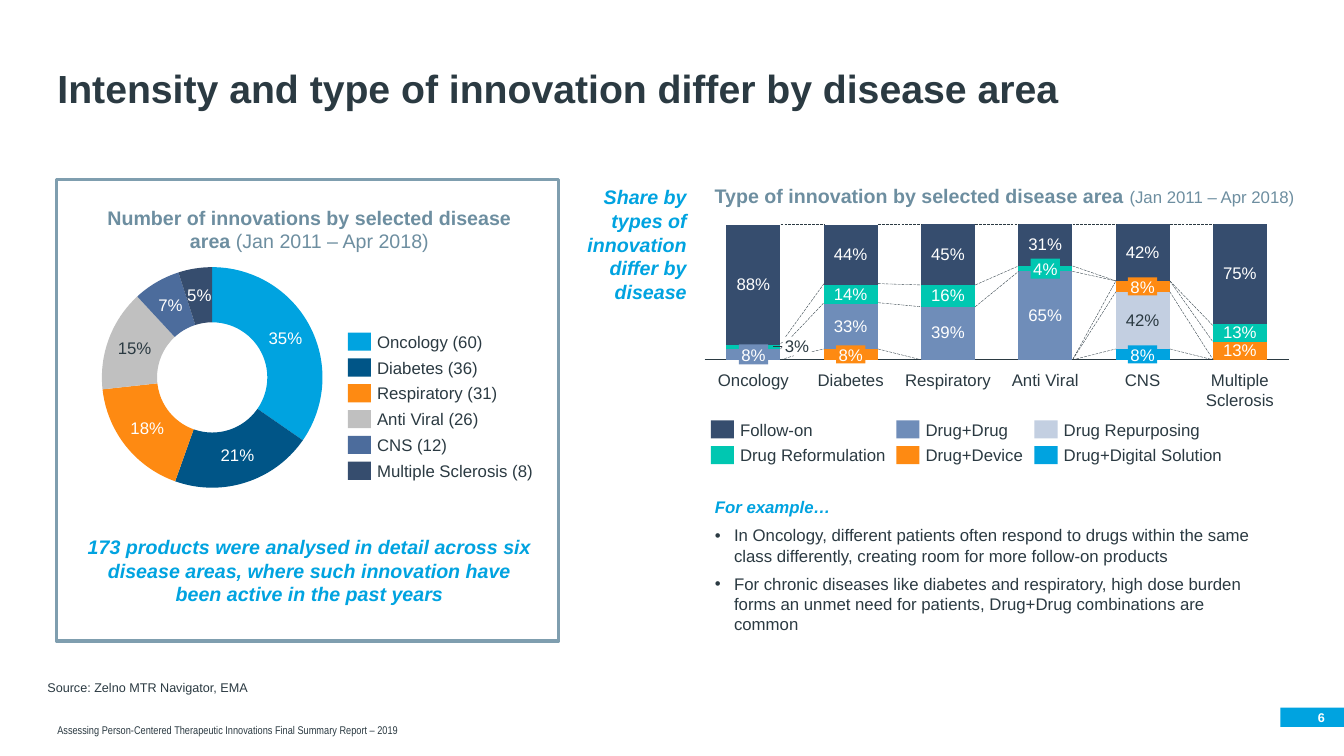
import pptx
import pptx.chart.data
import pptx.dml.color
import pptx.enum.chart
import pptx.enum.dml
import pptx.enum.shapes
import pptx.enum.text
import pptx.oxml
import pptx.oxml.ns
import pptx.util
from lxml import etree

Inches = pptx.util.Inches
Pt = pptx.util.Pt
ALIGN = pptx.enum.text.PP_ALIGN
ANCHOR = pptx.enum.text.MSO_ANCHOR
CHART = pptx.enum.chart.XL_CHART_TYPE
COLORS = {
    "ink": "2B3A42", "accent": "00A3E0", "heading": "6D8EA0", "frame": "7F9EAF",
    "white": "FFFFFF", "navy": "364D6E", "blue": "6F8DB9", "pale": "C3CFE1",
    "green": "00C7B1", "orange": "FE8A12", "deep": "005587", "grey": "C0C0C0",
    "slate": "4C6C9C",
}
PERIOD = "(Jan 2011 – Apr 2018)"
AREAS = ["Oncology", "Diabetes", "Respiratory", "Anti Viral", "CNS", "Multiple Sclerosis"]


def rgb(name):
    return pptx.dml.color.RGBColor.from_string(COLORS[name])


def format_font(font, size=12, color="ink", bold=False, italic=False, face="Arial"):
    font.size, font.name, font.bold, font.italic = Pt(size), face, bold, italic
    font.color.rgb = rgb(color)


def add_span(para, text, **style):
    span = para.add_run()
    span.text = text
    format_font(span.font, **style)


def set_frame(frame, anchor=ANCHOR.TOP, inset=(0.1, 0.05), wrap=True):
    frame.auto_size = pptx.enum.text.MSO_AUTO_SIZE.NONE
    frame.word_wrap, frame.vertical_anchor = wrap, anchor
    frame.margin_left = frame.margin_right = Inches(inset[0])
    frame.margin_top = frame.margin_bottom = Inches(inset[1])


def add_text(page, box, text, align=ALIGN.LEFT, tail=None, anchor=ANCHOR.TOP,
             inset=(0.1, 0.05), wrap=True, **style):
    shape = page.shapes.add_textbox(*map(Inches, box))
    set_frame(shape.text_frame, anchor, inset, wrap)
    para = shape.text_frame.paragraphs[0]
    para.alignment = align
    add_span(para, text, **style)
    if tail:
        add_span(para, tail[0], **{**style, "bold": False, "size": tail[1]})
    return shape


def add_block(page, box, fill=None, line=None):
    shape = page.shapes.add_shape(pptx.enum.shapes.MSO_SHAPE.RECTANGLE, *map(Inches, box))
    shape.shadow.inherit = False
    if fill:
        shape.fill.solid()
        shape.fill.fore_color.rgb = rgb(fill)
    else:
        shape.fill.background()
    if line:
        shape.line.color.rgb = rgb(line)
        shape.line.width = Pt(2.25)
    else:
        shape.line.fill.background()


def add_line(page, start, end, width=0.25, dashed=True):
    line = page.shapes.add_connector(
        pptx.enum.shapes.MSO_CONNECTOR.STRAIGHT, *map(Inches, start + end))
    line.line.color.rgb = rgb("ink")
    line.line.width = Pt(width)
    if dashed:
        line.line.dash_style = pptx.enum.dml.MSO_LINE.LONG_DASH
    etree.SubElement(line._element.spPr, pptx.oxml.ns.qn("a:effectLst"))


def add_key(page, left, top, name, color):
    add_block(page, (left, top, 0.23, 0.18), fill=color)
    add_text(page, (left + 0.29, top - 0.01, 1.56, 0.2), name,
             anchor=ANCHOR.MIDDLE, inset=(0, 0), wrap=False)


def add_plot(page, box, kind, series, layout):
    data = pptx.chart.data.CategoryChartData(number_format='0"%"')
    data.categories = ["1", "2", "3", "4", "5", "6"]
    for number, (values, colors, labels) in enumerate(series, 1):
        data.add_series(f"Series {number}", values)
    chart = page.shapes.add_chart(kind, *map(Inches, box), data).chart
    chart.has_legend = chart.has_title = False
    format_font(chart.font, size=10)
    area = chart._chartSpace.chart.plotArea
    for old in area.findall(pptx.oxml.ns.qn("c:layout")):
        area.remove(old)
    sides = "".join(f'<c:{tag} val="{value}"/>' for tag, value in zip("xywh", layout))
    area.insert(0, pptx.oxml.parse_xml(
        f'<c:layout {pptx.oxml.ns.nsdecls("c")}><c:manualLayout><c:layoutTarget val="inner"/>'
        f'<c:xMode val="edge"/><c:yMode val="edge"/>{sides}</c:manualLayout></c:layout>'))
    chart.plots[0].vary_by_categories = False
    for drawn, (values, colors, labels) in zip(chart.plots[0].series, series):
        drawn.format.fill.solid()
        drawn.format.fill.fore_color.rgb = rgb(colors[0])
        for index, color in enumerate(colors):
            if values[index] is None:
                continue
            point = drawn.points[index]
            point.format.fill.solid()
            point.format.fill.fore_color.rgb = rgb(color)
            if index in labels:
                dark = color in ("grey", "pale")
                format_font(point.data_label.font, color="ink" if dark else "white")
    return chart


def add_count_panel(page, box):
    left, top, width, height = box
    add_block(page, box, line="frame")
    add_text(page, (left + 0.38, top + 0.21, 4.26, 0.57),
             "Number of innovations by selected disease area ", ALIGN.CENTER,
             tail=(PERIOD, 14), size=14, color="heading", bold=True)
    colors = ["accent", "deep", "orange", "grey", "slate", "navy"]
    add_plot(page, (left + 0.22, top + 0.78, 2.65, 2.37), CHART.DOUGHNUT,
             [([35, 21, 18, 15, 7, 5], colors, range(6))], (0.087, 0.038, 0.826, 0.924))
    for row, (area, count, color) in enumerate(zip(AREAS, [60, 36, 31, 26, 12, 8], colors)):
        add_key(page, left + 2.89, top + 1.52 + 0.256 * row, f"{area} ({count})", color)
    add_text(page, (left + 0.2, top + 3.48, 4.62, 0.81),
             "173 products were analysed in detail across six disease areas, "
             "where such innovation have been active in the past years",
             ALIGN.CENTER, size=14, color="accent", bold=True, italic=True)


def add_type_chart(page, box):
    left, top, width, height = box
    series = [
        ([8, 8, 39, 65, 8, 13], ["blue", "orange", "blue", "blue", "accent", "orange"], {2, 3, 5}),
        ([3, 33, 16, 4, 42, 13], ["green", "blue", "green", "green", "pale", "green"], {1, 2, 4, 5}),
        ([88, 14, 45, 31, 8, 75], ["navy", "green", "navy", "navy", "orange", "navy"], {0, 1, 2, 3, 5}),
        ([None, 44, None, None, 42, None], ["navy"] * 6, {1, 4}),
    ]
    chart = add_plot(page, box, CHART.COLUMN_STACKED, series, (0.015, 0.059, 0.97, 0.882))
    chart.plots[0].gap_width, chart.plots[0].overlap = 80, 100
    value_axis, axis = chart.value_axis, chart.category_axis
    value_axis.minimum_scale, value_axis.maximum_scale = 0, 100
    value_axis.has_major_gridlines = value_axis.visible = False
    axis.tick_label_position = pptx.enum.chart.XL_TICK_LABEL_POSITION.NONE
    axis.major_tick_mark = axis.minor_tick_mark = pptx.enum.chart.XL_TICK_MARK.NONE
    axis.format.line.color.rgb = rgb("ink")
    axis.format.line.width = Pt(0.75)

    step, gap = 0.965, 0.43

    def level(percent):
        return top + 1.44 - 1.35 * percent / 100

    def center(bar):
        return left + 0.09 + step * (bar + 0.5)

    links = [
        [(100, 100)],
        [(100, 100), (56, 55), (42, 39), (8, 0)],
        [(100, 100), (55, 69), (39, 65)],
        [(100, 100), (69, 58), (65, 58), (0, 8), (0, 58), (0, 50)],
        [(100, 100), (50, 0), (58, 25), (58, 13), (8, 0)],
    ]
    pieces = [(bar, 0, start, gap, end) for bar, pairs in enumerate(links) for start, end in pairs]
    pieces += [(0, 0, 12, 0.02, 13), (0, 0.11, 17, gap, 42), (0, 0, 8, 0.02, 10),
               (0, 0, 0, 0.13, 3), (0, 0.05, 17, gap, 56), (0, 0.31, 6, gap, 8)]
    for bar, near, start, far, end in pieces:
        edge = center(bar) + 0.27
        add_line(page, (edge + near, level(start)), (edge + far, level(end)))
    add_line(page, (left + 0.86, level(10)), (left + 0.77, level(10)), 0.5, False)
    add_text(page, (left + 0.86, level(10) - 0.1, 0.29, 0.2), "3%", ALIGN.CENTER,
             anchor=ANCHOR.MIDDLE, inset=(0.02, 0), wrap=False)
    for bar, percent, text, color, tall in [
            (3, 67, "4%", "green", 0.2), (0, 4, "8%", "blue", 0.2), (4, 54, "8%", "orange", 0.18),
            (1, 4, "8%", "orange", 0.18), (4, 4, "8%", "accent", 0.18)]:
        chip = add_text(page, (center(bar) - 0.145, level(percent) - tall / 2, 0.29, tall), text,
                        ALIGN.CENTER, anchor=ANCHOR.MIDDLE, inset=(0.02, 0), wrap=False, color="white")
        chip.fill.solid()
        chip.fill.fore_color.rgb = rgb(color)
    for bar, area in enumerate(AREAS):
        add_text(page, (center(bar) - 0.45, top + 1.54, 0.9, 0.4), area, ALIGN.CENTER, inset=(0, 0))


def add_type_legend(page, box):
    left, top = box[:2]
    columns = [(0, [("Follow-on", "navy"), ("Drug Reformulation", "green")]),
               (1.84, [("Drug+Drug", "blue"), ("Drug+Device", "orange")]),
               (3.21, [("Drug Repurposing", "pale"), ("Drug+Digital Solution", "accent")])]
    for offset, keys in columns:
        for row, (name, color) in enumerate(keys):
            add_key(page, left + offset, top + 0.255 * row, name, color)


def place(shape, box):
    shape.left, shape.top, shape.width, shape.height = map(Inches, box)


def add_title(page, box):
    place(page.shapes.title, box)
    frame = page.shapes.title.text_frame
    set_frame(frame, ANCHOR.BOTTOM)
    para = frame.paragraphs[0]
    para.alignment, para.line_spacing = ALIGN.LEFT, 0.9
    add_span(para, "Intensity and type of innovation differ by disease area", size=28, bold=True)


def add_examples(page, box):
    body = page.placeholders[1]
    place(body, box)
    set_frame(body.text_frame, ANCHOR.MIDDLE)
    lines = ["For example…",
             "In Oncology, different patients often respond to drugs within the same class "
             "differently, creating room for more follow-on products",
             "For chronic diseases like diabetes and respiratory, high dose burden forms an unmet "
             "need for patients, Drug+Drug combinations are common"]
    for index, text in enumerate(lines):
        para = body.text_frame.add_paragraph() if index else body.text_frame.paragraphs[0]
        lead = index == 0
        properties = para._p.get_or_add_pPr()
        indent = 0 if lead else Inches(0.19)
        properties.set("marL", str(indent))
        properties.set("indent", str(-indent))
        bullet = etree.SubElement(properties, pptx.oxml.ns.qn("a:buNone" if lead else "a:buChar"))
        if not lead:
            bullet.set("char", "•")
        para.space_before = Pt(0 if lead else 6)
        add_span(para, text, color="accent" if lead else "ink", bold=lead, italic=lead)


def add_footer(page, box):
    left, top, width, height = box
    add_text(page, (left, top, width, 0.15), "Source: Zelno MTR Navigator, EMA",
             anchor=ANCHOR.BOTTOM, inset=(0, 0), size=9)
    add_text(page, (left, top + 0.24, 9.66, 0.37),
             "Assessing Person-Centered Therapeutic Innovations Final Summary Report – 2019",
             anchor=ANCHOR.BOTTOM, size=8, face="Arial Narrow")
    add_block(page, (left + 12.23, top + 0.27, 0.63, 0.19), fill="accent")
    add_text(page, (left + 12.23, top + 0.27, 0.44, 0.19), "6", ALIGN.RIGHT,
             anchor=ANCHOR.MIDDLE, inset=(0, 0), size=9, color="white", bold=True)


def main():
    deck = pptx.Presentation()
    deck.slide_width, deck.slide_height = Inches(13.33), Inches(7.5)
    page = deck.slides.add_slide(deck.slide_layouts[1])
    add_title(page, (0.47, 0.32, 12.4, 0.84))
    add_count_panel(page, (0.56, 1.78, 4.98, 4.58))
    add_text(page, (5.6, 1.79, 1.31, 1.13), "Share by types of innovation differ by disease",
             ALIGN.RIGHT, size=14, color="accent", bold=True, italic=True)
    add_text(page, (6.99, 1.78, 5.97, 0.34), "Type of innovation by selected disease area ",
             tail=(PERIOD, 12), size=14, color="heading", bold=True)
    add_type_chart(page, (6.9, 2.13, 5.97, 1.53))
    add_type_legend(page, (7.05, 4.17, 5.06, 0.45))
    add_examples(page, (6.99, 4.87, 5.53, 1.48))
    add_footer(page, (0.47, 6.75, 12.4, 0.61))
    deck.save("out.pptx")


if __name__ == "__main__":
    main()
